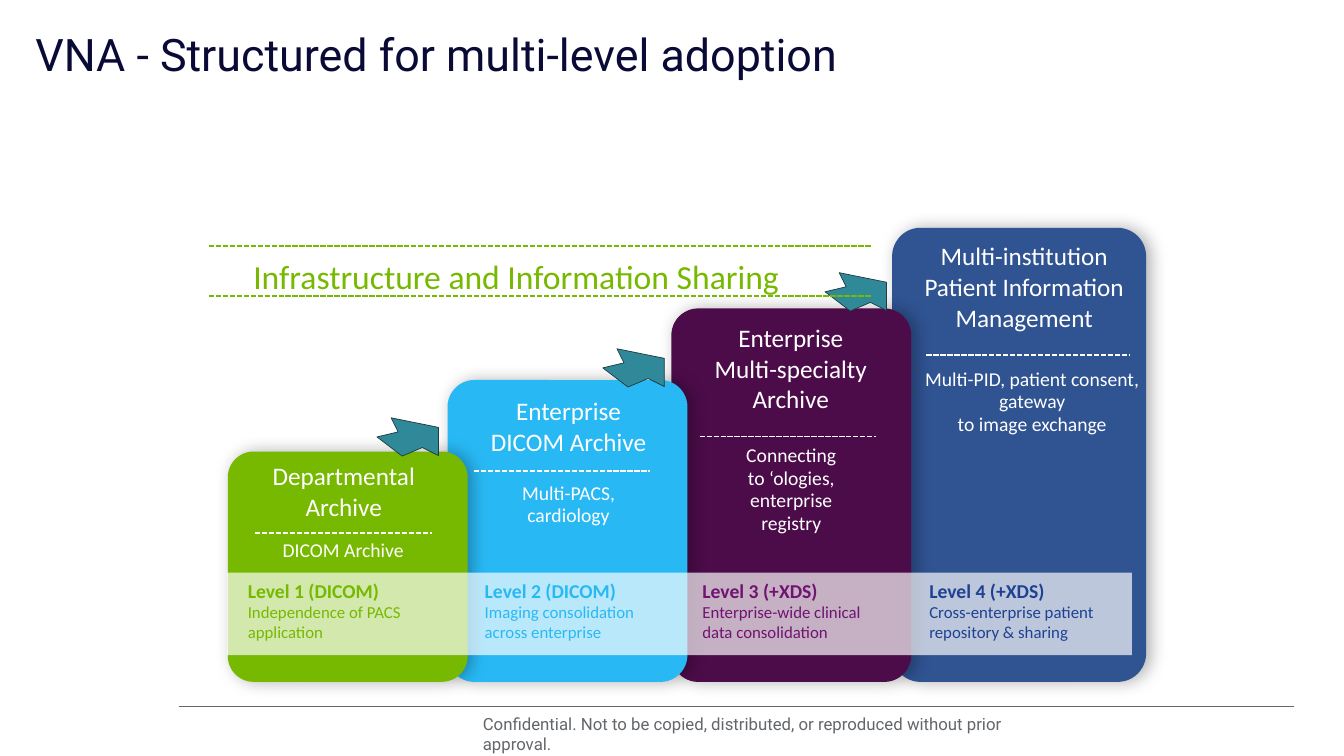
import lxml.etree
import pptx
import pptx.dml.color
import pptx.enum.dml
import pptx.enum.shapes
import pptx.enum.text
import pptx.oxml.ns
import pptx.util

COLUMNS, ROWS = 133.33, 75
PILLAR_BOTTOM = 67.65
WHITE, GREEN, GREY = "FFFFFF", "76B900", "63666A"
CENTER = pptx.enum.text.PP_ALIGN.CENTER
DASH = pptx.enum.dml.MSO_LINE.SQUARE_DOT

PILLARS = [
    dict(box=(22.6, 44.8, 23.8), color=GREEN, label_color=GREEN,
         heading="Departmental Archive", heading_box=(24.1, 45.6, 20, 6),
         detail="DICOM Archive", detail_box=(25.1, 53.5, 17.9, 2.2),
         rule=(25.3, 42.9, 52.9), label_box=(23.6, 21.4),
         level="Level 1 (DICOM)", benefit="Independence of PACS application"),
    dict(box=(44.4, 37.7, 23.8), color="28B9F5", label_color="28B9F5",
         heading="Enterprise\vDICOM Archive", heading_box=(44.8, 39.2, 23.2, 6),
         detail="Multi-PACS, cardiology", detail_box=(49.4, 47.8, 14, 4.5),
         rule=(47, 64.5, 46.7), label_box=(47.1, 19.7),
         level="Level 2 (DICOM)", benefit="Imaging consolidation across enterprise"),
    dict(box=(66.6, 30.6, 23.8), color="4C0C4A", label_color="711371",
         heading="Enterprise\vMulti-specialty\vArchive", heading_box=(66.4, 31.9, 24.1, 9.1),
         detail="Connecting\vto ‘ologies,\venterprise\vregistry", detail_box=(66.7, 44.1, 23.6, 9),
         rule=(69.4, 86.9, 43.3), label_box=(68.7, 19.8),
         level="Level 3 (+XDS)", benefit="Enterprise-wide clinical data consolidation"),
    dict(box=(88.5, 22.6, 25.2), color="305392", label_color="1E4191",
         heading="Multi-institution\vPatient Information Management", heading_box=(89.8, 23.8, 23.6, 9.1),
         detail="Multi-PID, patient consent, gateway\vto image exchange", detail_box=(90.8, 36.5, 23.2, 6.7),
         rule=(91.9, 112.1, 35.2), label_box=(91.2, 20.9),
         level="Level 4 (+XDS)", benefit="Cross-enterprise patient repository & sharing"),
]
ARROW_OUTLINE = [(1.4, 0), (6.1, 0.95), (6.1, 3.75), (4.5, 2.95), (2.5, 3.8), (0, 1.9), (2.1, 1.4)]
ARROW_PLACES = [(37.4, 41.45), (59.8, 34.6), (81.85, 27.05)]


def rgb(value):
    return pptx.dml.color.RGBColor.from_string(value)


def write(paragraph, text, size=18, color=WHITE, font="Calibri", bold=False, align=None, spacing=None):
    paragraph.text = text
    paragraph.alignment = align
    paragraph.line_spacing = spacing
    for run in paragraph.runs:
        run.font.size = pptx.util.Pt(size)
        run.font.name = font
        run.font.bold = bold
        run.font.color.rgb = rgb(color)


class SlideGrid:
    """Draws styled elements on a slide divided into columns and rows."""

    def __init__(self, presentation):
        self.slide = presentation.slides.add_slide(presentation.slide_layouts[6])
        self.column = presentation.slide_width / COLUMNS
        self.row = presentation.slide_height / ROWS

    def point(self, x, y):
        return round(x * self.column), round(y * self.row)

    def text(self, left, top, width, height, paragraphs, inset=0):
        box = self.slide.shapes.add_textbox(*self.point(left, top), *self.point(width, height))
        frame = box.text_frame
        frame.word_wrap = True
        frame.margin_left = frame.margin_right = pptx.util.Inches(inset)
        frame.margin_top = frame.margin_bottom = pptx.util.Inches(inset / 2)
        for index, (text, style) in enumerate(paragraphs):
            paragraph = frame.add_paragraph() if index else frame.paragraphs[0]
            write(paragraph, text, **style)

    def paint(self, shape, color):
        shape.shadow.inherit = False
        shape.fill.solid()
        shape.fill.fore_color.rgb = rgb(color)
        shape.line.fill.background()

    def pillar(self, left, top, width, color):
        shape = self.slide.shapes.add_shape(
            pptx.enum.shapes.MSO_SHAPE.ROUNDED_RECTANGLE,
            *self.point(left, top), *self.point(width, PILLAR_BOTTOM - top))
        shape.adjustments[0] = 0.112
        self.paint(shape, color)
        effects = shape._element.spPr.find(pptx.oxml.ns.qn("a:effectLst"))
        shadow = lxml.etree.SubElement(
            effects, pptx.oxml.ns.qn("a:outerShdw"), rotWithShape="0", dir="0",
            blurRad=str(pptx.util.Pt(12)), dist=str(pptx.util.Pt(3)))
        black = lxml.etree.SubElement(shadow, pptx.oxml.ns.qn("a:srgbClr"), val="000000")
        lxml.etree.SubElement(black, pptx.oxml.ns.qn("a:alpha"), val="30000")

    def band(self, left, top, width, height, opacity):
        shape = self.slide.shapes.add_shape(
            pptx.enum.shapes.MSO_SHAPE.RECTANGLE, *self.point(left, top), *self.point(width, height))
        self.paint(shape, WHITE)
        color = shape._element.spPr.find(".//" + pptx.oxml.ns.qn("a:srgbClr"))
        lxml.etree.SubElement(color, pptx.oxml.ns.qn("a:alpha"), val=str(opacity * 1000))

    def arrow(self, left, top):
        corners = [self.point(left + x, top + y) for x, y in ARROW_OUTLINE]
        builder = self.slide.shapes.build_freeform(*corners[0])
        builder.add_line_segments(corners[1:], close=True)
        shape = builder.convert_to_shape()
        self.paint(shape, "2F8998")
        shape.line.color.rgb = rgb("1F3A40")
        shape.line.width = pptx.util.Pt(0.5)

    def rule(self, left, right, y, color, width=1.25, dash=DASH):
        connector = self.slide.shapes.add_connector(
            pptx.enum.shapes.MSO_CONNECTOR.STRAIGHT, *self.point(left, y), *self.point(right, y))
        connector.line.color.rgb = rgb(color)
        connector.line.width = pptx.util.Pt(width)
        connector.line.dash_style = dash
        lxml.etree.SubElement(connector._element.spPr, pptx.oxml.ns.qn("a:effectLst"))


def main():
    presentation = pptx.Presentation()
    presentation.slide_width = pptx.util.Inches(13.33)
    presentation.slide_height = pptx.util.Inches(7.5)
    grid = SlideGrid(presentation)

    grid.text(47.9, 70.8, 56.4, 2, [
        ("Confidential. Not to be copied, distributed, or reproduced without prior approval.",
         dict(size=12, color=GREY, font="Roboto"))])
    grid.rule(17.8, 128.4, 70.1, GREY, width=0.25, dash=None)
    grid.text(3.5, 3.3, 123.4, 5.8, [
        ("VNA - Structured for multi-level adoption",
         dict(size=32, color="0A0A37", font="Roboto", spacing=0.9))])
    grid.text(8, 24.4, 86.4, 4.6, [
        ("Infrastructure and Information Sharing",
         dict(size=24, color=GREEN, align=CENTER, spacing=pptx.util.Pt(36)))])

    for pillar in reversed(PILLARS):
        grid.pillar(*pillar["box"], pillar["color"])
    for place in ARROW_PLACES:
        grid.arrow(*place)
    for pillar in PILLARS:
        grid.text(*pillar["heading_box"], [
            (pillar["heading"], dict(size=18, align=CENTER, spacing=pptx.util.Pt(22)))])
        grid.text(*pillar["detail_box"], [
            (pillar["detail"], dict(size=14, align=CENTER, spacing=pptx.util.Pt(16)))])
        grid.rule(*pillar["rule"], WHITE)

    grid.band(22.5, 56.8, 89.8, 8.2, opacity=68)
    for pillar in PILLARS:
        left, width = pillar["label_box"]
        color = pillar["label_color"]
        grid.text(left, 56.9, width, 7.4, [
            (pillar["level"], dict(size=14, color=color, bold=True)),
            (pillar["benefit"], dict(size=12, color=color))], inset=0.1)
    for y in (24.4, 29.4):
        grid.rule(20.7, 86.4, y, GREEN)

    presentation.save("out.pptx")


if __name__ == "__main__":
    main()
